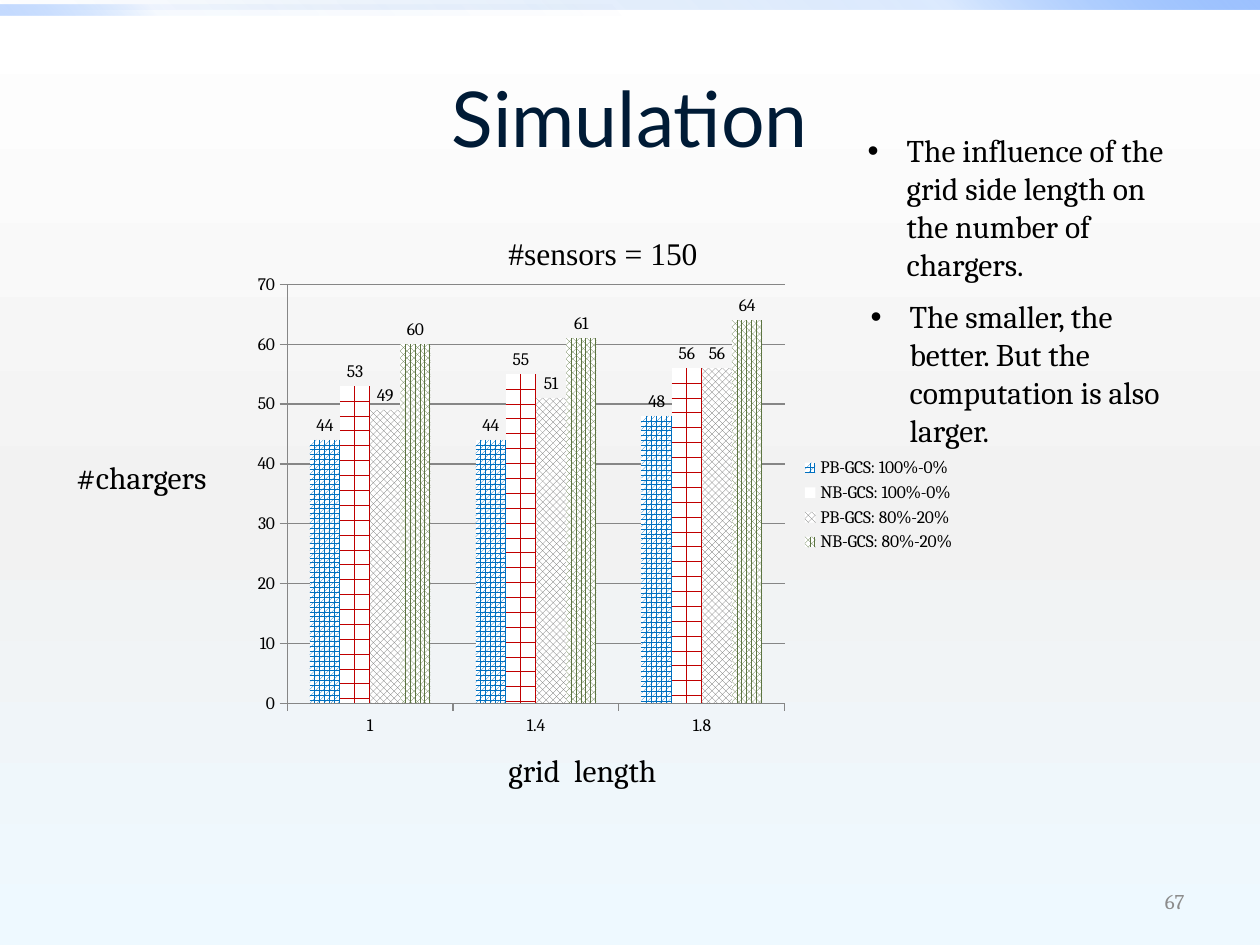
from dataclasses import dataclass

from lxml import etree
from pptx import Presentation
from pptx.chart.data import CategoryChartData
from pptx.dml.color import RGBColor
from pptx.enum.chart import XL_CHART_TYPE, XL_LABEL_POSITION, XL_LEGEND_POSITION, XL_TICK_MARK
from pptx.enum.dml import MSO_PATTERN
from pptx.enum.shapes import MSO_SHAPE
from pptx.enum.text import MSO_ANCHOR, MSO_AUTO_SIZE, PP_ALIGN
from pptx.oxml.ns import qn
from pptx.util import Emu, Pt

COLUMNS = XL_CHART_TYPE.COLUMN_CLUSTERED
OUTSIDE = XL_TICK_MARK.OUTSIDE
LEFT, CENTER, RIGHT = PP_ALIGN.LEFT, PP_ALIGN.CENTER, PP_ALIGN.RIGHT
TOP, MIDDLE = MSO_ANCHOR.TOP, MSO_ANCHOR.MIDDLE

PX = 914400 / 126
BULLET_INDENT = 39
SERIF, SANS, TIMES = "Cambria", "Lato", "Times New Roman"
COLORS = {
    "text": "000000", "title": "001B36", "number": "8C8C8C", "axis": "868686",
    "white": "FFFFFF", "mist": "F2F2F2", "ice": "EEF9FF",
    "deep": "0058B7", "sky": "4F95FF", "pale": "9EC2FF",
    "blue": "0070C0", "red": "C00000", "gray": "686A69", "green": "5C7441",
}


@dataclass(frozen=True)
class Area:
    left: int
    top: int
    width: int
    height: int

    def emu(self) -> list[Emu]:
        return [px(n) for n in (self.left, self.top, self.width, self.height)]


@dataclass(frozen=True)
class Stop:
    position: int
    color: str
    opacity: int = 100


@dataclass(frozen=True)
class Band:
    area: Area
    stops: tuple[Stop, ...]
    angle: int


@dataclass(frozen=True)
class Label:
    area: Area
    text: str
    font: str = SERIF
    size: int = 18
    color: str = "text"
    align: PP_ALIGN = LEFT
    anchor: MSO_ANCHOR = TOP


@dataclass(frozen=True)
class Series:
    name: str
    values: tuple[int, ...]
    pattern: MSO_PATTERN
    color: str


BACKGROUND = (Stop(0, "white"), Stop(55, "mist"), Stop(100, "ice"))
BANDS = (
    Band(Area(0, 0, 1260, 10),
         (Stop(0, "deep", 0), Stop(75, "sky", 20), Stop(100, "pale")), 315),
    Band(Area(0, 5, 630, 10),
         (Stop(0, "deep", 0), Stop(75, "sky", 5), Stop(100, "pale", 60)), 135),
)
TITLE = Label(Area(63, 38, 1134, 157), "Simulation", SANS, 44, "title", CENTER, MIDDLE)
FINDINGS = (
    Label(Area(855, 125, 348, 165),
          "The influence of the grid side length on the number of chargers."),
    Label(Area(858, 291, 348, 165),
          "The smaller, the better. But the computation is also larger."),
)
LABELS = (
    Label(Area(496, 745, 213, 50), "grid  length"),
    Label(Area(64, 452, 179, 50), "#chargers"),
    Label(Area(496, 228, 233, 50), "#sensors = 150", TIMES),
    Label(Area(903, 876, 294, 50), "67", size=12, color="number", align=RIGHT, anchor=MIDDLE),
)
CHART_AREA = Area(243, 265, 725, 480)
GRID_LENGTHS = ("1", "1.4", "1.8")
SERIES = (
    Series("PB-GCS: 100%-0%", (44, 44, 48), MSO_PATTERN.SPHERE, "blue"),
    Series("NB-GCS: 100%-0%", (53, 55, 56), MSO_PATTERN.HORIZONTAL_BRICK, "red"),
    Series("PB-GCS: 80%-20%", (49, 51, 56), MSO_PATTERN.LARGE_CHECKER_BOARD, "gray"),
    Series("NB-GCS: 80%-20%", (60, 61, 64), MSO_PATTERN.PERCENT_75, "green"),
)


def px(length: int) -> Emu:
    return Emu(round(length * PX))


def rgb(name: str) -> RGBColor:
    return RGBColor.from_string(COLORS[name])


def set_gradient(fill, properties, stops: tuple[Stop, ...], angle: int) -> None:
    """Fill with a gradient whose angle runs clockwise from the left edge."""
    fill.solid()
    gradient = etree.Element(qn("a:gradFill"), rotWithShape="1")
    stop_list = etree.SubElement(gradient, qn("a:gsLst"))
    for stop in stops:
        entry = etree.SubElement(stop_list, qn("a:gs"), pos=str(stop.position * 1000))
        color = etree.SubElement(entry, qn("a:srgbClr"), val=COLORS[stop.color])
        if stop.opacity < 100:
            etree.SubElement(color, qn("a:alpha"), val=str(stop.opacity * 1000))
    etree.SubElement(gradient, qn("a:lin"), ang=str(angle * 60000), scaled="0")
    properties.replace(properties.find(qn("a:solidFill")), gradient)


def add_band(page, band: Band) -> None:
    shape = page.shapes.add_shape(MSO_SHAPE.RECTANGLE, *band.area.emu())
    shape.shadow.inherit = False
    shape.line.fill.background()
    set_gradient(shape.fill, shape.element.spPr, band.stops, band.angle)


def write(box, label: Label) -> None:
    """Place a box and give it the label's text and format."""
    box.left, box.top, box.width, box.height = label.area.emu()
    frame = box.text_frame
    frame.text = label.text
    frame.word_wrap = True
    frame.auto_size = MSO_AUTO_SIZE.NONE
    frame.vertical_anchor = label.anchor
    para = frame.paragraphs[0]
    para.alignment = label.align
    para.space_before = Pt(0)
    para.font.name = label.font
    para.font.size = Pt(label.size)
    para.font.color.rgb = rgb(label.color)


def write_bullet(box, label: Label) -> None:
    write(box, label)
    properties = box.text_frame.paragraphs[0]._p.get_or_add_pPr()
    properties.set("marL", str(px(BULLET_INDENT)))
    properties.set("indent", str(-px(BULLET_INDENT)))


def add_charger_chart(page) -> None:
    data = CategoryChartData()
    data.categories = GRID_LENGTHS
    for series in SERIES:
        data.add_series(series.name, series.values)
    chart = page.shapes.add_chart(COLUMNS, *CHART_AREA.emu(), data).chart
    chart.has_title = False
    chart.font.name = SERIF
    chart.font.size = Pt(10)
    chart.font.color.rgb = rgb("text")
    chart.has_legend = True
    chart.legend.position = XL_LEGEND_POSITION.RIGHT
    chart.legend.include_in_layout = False

    for axis in (chart.category_axis, chart.value_axis):
        axis.major_tick_mark = OUTSIDE
        axis.format.line.color.rgb = rgb("axis")
    values = chart.value_axis
    values.minimum_scale, values.maximum_scale, values.major_unit = 0, 70, 10
    values.has_major_gridlines = True
    values.major_gridlines.format.line.color.rgb = rgb("axis")

    plot = chart.plots[0]
    plot.vary_by_categories = False
    plot.gap_width = 150
    plot.overlap = 0
    for drawn, series in zip(plot.series, SERIES):
        fill = drawn.format.fill
        fill.patterned()
        fill.pattern = series.pattern
        fill.fore_color.rgb = rgb(series.color)
        fill.back_color.rgb = rgb("white")
        drawn.data_labels.show_value = True
        drawn.data_labels.position = XL_LABEL_POSITION.OUTSIDE_END


def main() -> None:
    deck = Presentation()
    deck.slide_width, deck.slide_height = px(1260), px(945)
    page = deck.slides.add_slide(deck.slide_layouts.get_by_name("Two Content"))
    title, *bodies = page.placeholders
    background = page.background.fill
    background.solid()
    set_gradient(background, page.element.find(".//" + qn("p:bgPr")), BACKGROUND, 90)
    for band in BANDS:
        add_band(page, band)
    write(title, TITLE)
    add_charger_chart(page)
    for label in LABELS:
        write(page.shapes.add_textbox(*label.area.emu()), label)
    for body, finding in zip(bodies, FINDINGS):
        write_bullet(body, finding)
    deck.save("out.pptx")


if __name__ == "__main__":
    main()
